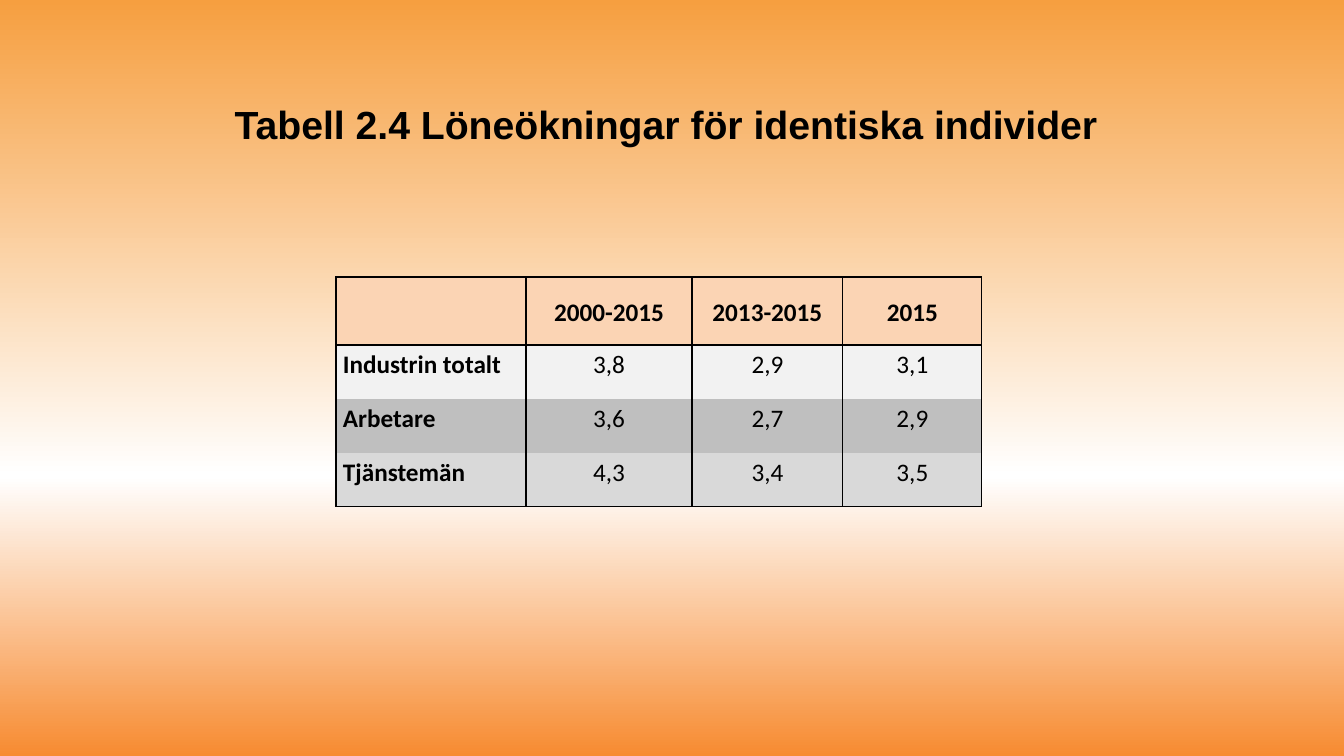
"""Build a slide with a table of wage increases for identical individuals."""
from pptx import Presentation, util as u
from pptx.dml.color import RGBColor
from pptx.enum import text
from pptx.oxml import parse_xml
from pptx.oxml.ns import nsdecls, qn
from copy import deepcopy

TITLE = "Tabell 2.4 Löneökningar för identiska individer"
ROWS = [
    ("", "2000-2015", "2013-2015", "2015"),
    ("Industrin totalt", "3,8", "2,9", "3,1"),
    ("Arbetare", "3,6", "2,7", "2,9"),
    ("Tjänstemän", "4,3", "3,4", "3,5"),
]
COLORS = {"ink": "000000", "header": "FBD4B4", "total": "F2F2F2", "workers": "BFBFBF",
          "staff": "D9D9D9", "bottom": "F78B31", "middle": "FFFFFF", "top": "F69F40"}
ROW_FILLS = ("header", "total", "workers", "staff")
GRADIENT = [(0, "bottom"), (0.37, "middle"), (1, "top")]
COLUMN_WIDTHS = (190, 166, 151, 139)
ROW_HEIGHTS = (68, 54, 54, 54)
TABLE_LEFT, TABLE_TOP = 336, 277
TITLE_BOX = (126, 67, 1092, 210)
TITLE_MARGINS = (10, 5, 22, 101)
PX = 914400 / 100.8


def px(length):
    return u.Emu(round(length * PX))


def color(name):
    return RGBColor.from_string(COLORS[name])


def add_run(paragraph, words, font_name, size, bold):
    run = paragraph.add_run()
    run.text = words
    run.font.name, run.font.size, run.font.bold = font_name, u.Pt(size), bold
    run.font.color.rgb = color("ink")


def set_margins(target, left, top, right, bottom):
    target.margin_left, target.margin_top = px(left), px(top)
    target.margin_right, target.margin_bottom = px(right), px(bottom)


def set_borders(cell, visible):
    for side in "LRTB":
        ink = f'<a:solidFill><a:srgbClr val="{COLORS["ink"]}"/></a:solidFill>'
        paint = ink if side in visible else "<a:noFill/>"
        cell._tc.get_or_add_tcPr().append(parse_xml(
            f'<a:ln{side} {nsdecls("a")} w="{u.Pt(1)}">{paint}</a:ln{side}>'))


def paint_background(slide):
    fill = slide.background.fill
    fill.gradient()
    fill.gradient_angle = 90
    stop_list = slide.element.find(".//" + qn("a:gsLst"))
    stop_list.append(deepcopy(stop_list[-1]))
    for stop, (position, name) in zip(fill.gradient_stops, GRADIENT):
        stop.position = position
        stop.color.rgb = color(name)


def add_title(slide):
    title = slide.shapes.title
    title.left, title.top, title.width, title.height = map(px, TITLE_BOX)
    frame = title.text_frame
    frame.word_wrap = True
    frame.auto_size = text.MSO_AUTO_SIZE.NONE
    frame.vertical_anchor = text.MSO_ANCHOR.MIDDLE
    set_margins(frame, *TITLE_MARGINS)
    paragraph = frame.paragraphs[0]
    paragraph.alignment = text.PP_ALIGN.CENTER
    add_run(paragraph, TITLE, "Arial", 28, True)


def add_wage_table(slide):
    table = slide.shapes.add_table(
        len(ROWS), len(COLUMN_WIDTHS), px(TABLE_LEFT), px(TABLE_TOP),
        px(sum(COLUMN_WIDTHS)), px(sum(ROW_HEIGHTS))).table
    table.first_row = table.horz_banding = False
    for column, width in zip(table.columns, COLUMN_WIDTHS):
        column.width = px(width)
    for r, values in enumerate(ROWS):
        table.rows[r].height = px(ROW_HEIGHTS[r])
        borders = "LR" + ("T" if r < 2 else "") + ("B" if r in (0, len(ROWS) - 1) else "")
        for c, value in enumerate(values):
            cell = table.cell(r, c)
            set_margins(cell, 7, 0, 7, 0)
            cell.vertical_anchor = text.MSO_ANCHOR.MIDDLE if r == 0 else text.MSO_ANCHOR.TOP
            set_borders(cell, borders)
            cell.fill.solid()
            cell.fill.fore_color.rgb = color(ROW_FILLS[r])
            if value:
                paragraph = cell.text_frame.paragraphs[0]
                label = r > 0 and c == 0
                paragraph.alignment = text.PP_ALIGN.JUSTIFY if label else text.PP_ALIGN.CENTER
                paragraph.line_spacing = 1.15
                add_run(paragraph, value, "Calibri", 18, r == 0 or c == 0)


def main():
    presentation = Presentation()
    presentation.slide_width, presentation.slide_height = px(1344), px(756)
    slide = presentation.slides.add_slide(presentation.slide_layouts.get_by_name("Title Only"))
    paint_background(slide)
    add_title(slide)
    add_wage_table(slide)
    presentation.save("out.pptx")


if __name__ == "__main__":
    main()
